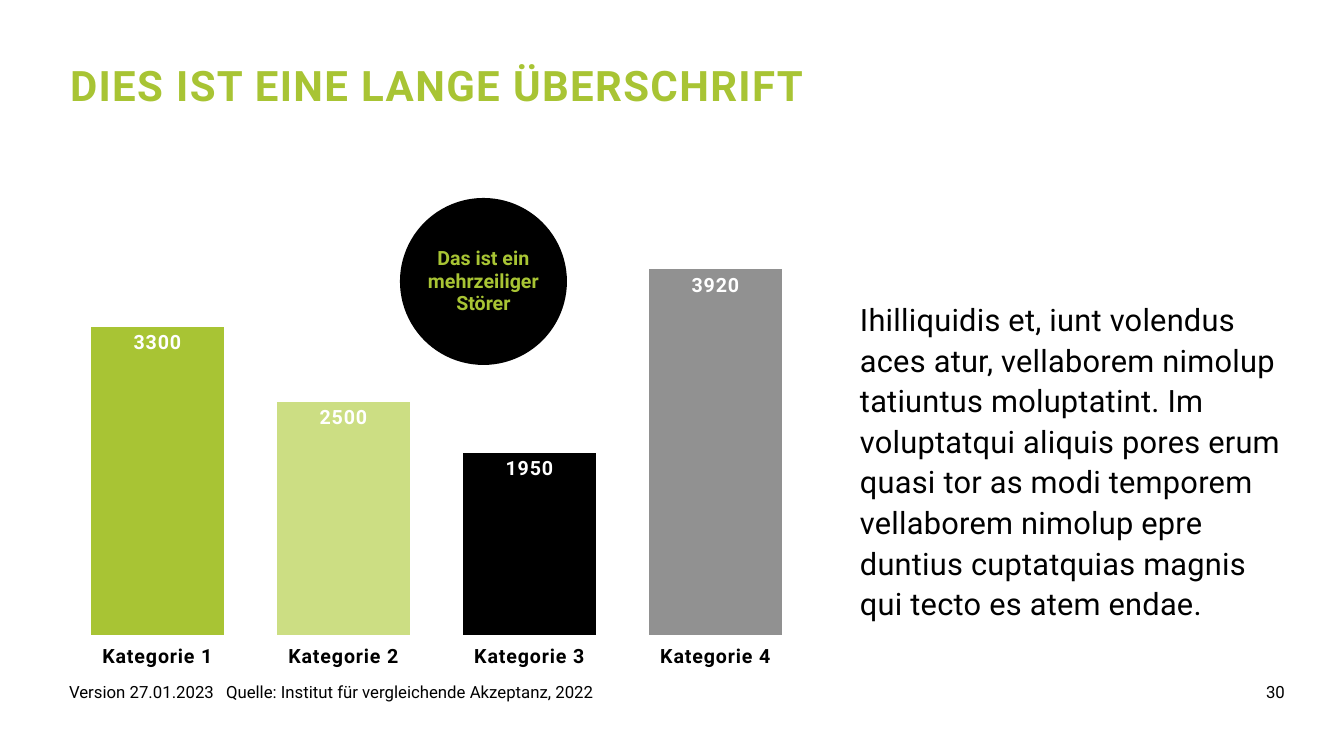
from lxml.etree import SubElement
from pptx import Presentation
from pptx.chart.data import CategoryChartData
from pptx.dml.color import RGBColor
from pptx.enum.chart import XL_CHART_TYPE, XL_LABEL_POSITION, XL_TICK_LABEL_POSITION, XL_TICK_MARK
from pptx.enum.shapes import MSO_SHAPE
from pptx.enum.text import MSO_ANCHOR, MSO_AUTO_SIZE, PP_ALIGN
from pptx.oxml import parse_xml
from pptx.oxml.ns import nsdecls, qn
from pptx.util import Pt

FONT = "Roboto"
GREEN = RGBColor(0xA8, 0xC4, 0x34)
LIME = RGBColor(0xCC, 0xDE, 0x83)
BLACK = RGBColor(0, 0, 0)
GRAY = RGBColor(0x91, 0x91, 0x91)
WHITE = RGBColor(255, 255, 255)

BARS = [
    ("Kategorie 1", 3300, GREEN),
    ("Kategorie 2", 2500, LIME),
    ("Kategorie 3", 1950, BLACK),
    ("Kategorie 4", 3920, GRAY),
]
BODY = (
    "Ihilliquidis et, iunt volendus aces atur, vellaborem nimolup tatiuntus "
    "moluptatint. Im voluptatqui aliquis pores erum quasi tor as modi temporem "
    "vellaborem nimolup epre duntius cuptatquias magnis\vqui tecto es atem endae."
)


def px(n):
    return round(n * 914400 / 100.8)


def style(font, size, color, bold=False):
    font.name = FONT
    font.size = Pt(size)
    font.color.rgb = color
    font.bold = bold


def write(shape, text, size, color=BLACK, bold=False, align=PP_ALIGN.LEFT,
          anchor=MSO_ANCHOR.TOP, lead=None, track=0, tab=None):
    frame = shape.text_frame
    frame.word_wrap = True
    frame.auto_size = MSO_AUTO_SIZE.NONE
    frame.vertical_anchor = anchor
    frame.margin_left = frame.margin_right = 0
    frame.margin_top = frame.margin_bottom = 0
    para = frame.paragraphs[0]
    para.text = text
    para.alignment = align
    para.line_spacing = lead
    if tab:
        tabs = SubElement(para._p.get_or_add_pPr(), qn("a:tabLst"))
        SubElement(tabs, qn("a:tab"), pos=str(px(tab)), algn="l")
    style(para.font, size, color, bold)
    if track:
        for run in para.runs:
            run.font._element.set("spc", str(track))


def add_text(slide, box, text, size, **look):
    shape = slide.shapes.add_textbox(*map(px, box))
    write(shape, text, size, **look)


def add_title(slide, box, text):
    title = slide.shapes.title
    title.left, title.top, title.width, title.height = map(px, box)
    write(title, text, 30, GREEN, True, lead=0.85, track=100)


def add_bars(slide, box):
    data = CategoryChartData()
    data.categories = [name for name, _, _ in BARS]
    data.add_series("Series 1", [value for _, value, _ in BARS])
    chart = slide.shapes.add_chart(
        XL_CHART_TYPE.COLUMN_CLUSTERED, *map(px, box), data).chart
    chart.has_title = chart.has_legend = False
    style(chart.font, 10, BLACK)

    # Axes
    scale = chart.value_axis
    scale.minimum_scale, scale.maximum_scale = 0, 4500
    scale.has_major_gridlines = False
    scale.visible = False
    names = chart.category_axis
    names.major_tick_mark = XL_TICK_MARK.NONE
    names.tick_label_position = XL_TICK_LABEL_POSITION.LOW
    names.format.line.fill.background()
    style(names.tick_labels.font, 14, BLACK, True)

    # Columns and values
    plot = chart.plots[0]
    plot.gap_width, plot.overlap = 40, 100
    plot.vary_by_categories = False
    series = plot.series[0]
    for i, (_, _, color) in enumerate(BARS):
        fill = series.points[i].format.fill
        fill.solid()
        fill.fore_color.rgb = color
    labels = series.data_labels
    labels.show_value = True
    labels.position = XL_LABEL_POSITION.INSIDE_END
    style(labels.font, 14, WHITE, True)

    # Letter spacing and plot area
    root = chart._chartSpace
    for props in root.iter(qn("a:defRPr")):
        props.set("spc", "50")
    area = root.find(".//" + qn("c:plotArea"))
    for old in area.findall(qn("c:layout")):
        area.remove(old)
    area.insert(0, parse_xml(
        f'<c:layout {nsdecls("c")}><c:manualLayout><c:layoutTarget val="inner"/>'
        '<c:xMode val="edge"/><c:yMode val="edge"/><c:x val="0.02"/>'
        '<c:y val="0.02"/><c:w val="0.96"/><c:h val="0.9"/>'
        '</c:manualLayout></c:layout>'))


def add_badge(slide, box, text):
    badge = slide.shapes.add_shape(MSO_SHAPE.OVAL, *map(px, box))
    badge.shadow.inherit = False
    badge.fill.solid()
    badge.fill.fore_color.rgb = BLACK
    badge.line.fill.background()
    write(badge, text, 14, GREEN, True, PP_ALIGN.CENTER, MSO_ANCHOR.MIDDLE, 0.95)


def add_footer(slide, box):
    left, top, width, height = box
    half = width - 217
    add_text(slide, (left, top, half, height),
             "Version 27.01.2023\tQuelle: Institut für vergleichende Akzeptanz, 2022",
             12, tab=157)
    add_text(slide, (left + half, top, 217, height), "30", 12, align=PP_ALIGN.RIGHT)


def main():
    deck = Presentation()
    deck.slide_width, deck.slide_height = px(1344), px(756)
    slide = deck.slides.add_slide(deck.slide_layouts[5])
    add_bars(slide, (49, 206, 775, 466))
    add_footer(slide, (69, 682, 1216, 40))
    add_title(slide, (70, 67, 827, 113), "DIES IST EINE LANGE ÜBERSCHRIFT")
    add_text(slide, (860, 297, 424, 352), BODY, 22, lead=1.1, track=20)
    add_badge(slide, (400, 198, 167, 167), "Das ist ein mehrzeiliger Störer")
    deck.save("out.pptx")


if __name__ == "__main__":
    main()
